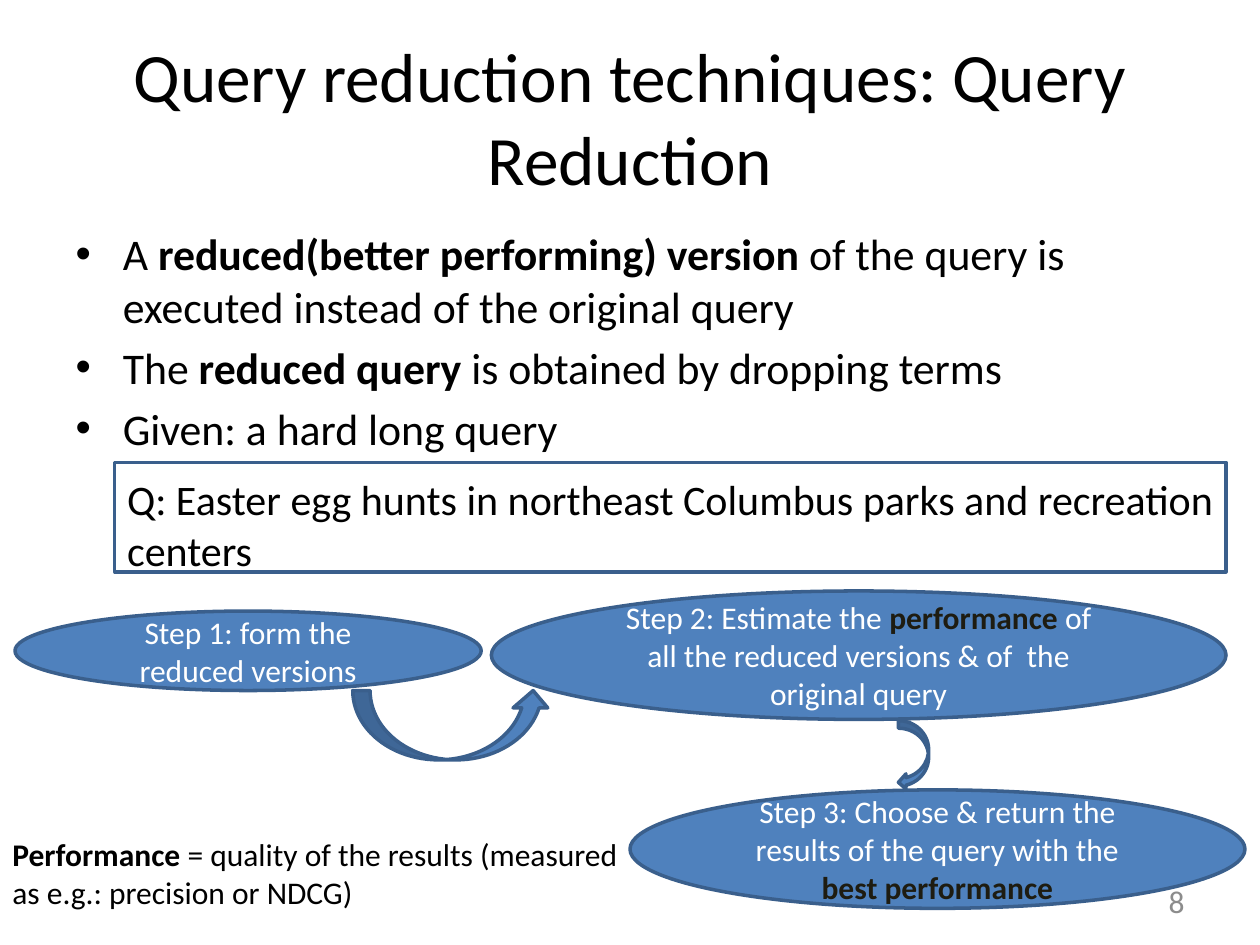
"""Build the slide on query reduction and its three steps."""
import pptx
import pptx.dml.color
import pptx.enum.shapes
import pptx.enum.text
import pptx.util

Pt = pptx.util.Pt
RGB = pptx.dml.color.RGBColor.from_string
Preset = pptx.enum.shapes.MSO_SHAPE
Align = pptx.enum.text.PP_ALIGN
Anchor = pptx.enum.text.MSO_ANCHOR

THEME = {
    "font": "Calibri",
    "fill": "4F81BD",
    "outline": "3A5F8C",
    "outline_width": 2,
    "emphasis": "1E1C11",
    "title": {"size": 39.6, "color": "000000"},
    "body": {"size": 25, "color": "000000"},
    "query": {"size": 24, "color": "000000"},
    "step": {"size": 18, "color": "FFFFFF"},
    "note": {"size": 18, "color": "000000"},
    "number": {"size": 18, "color": "8C8C8C"},
}


def write(holder, paragraphs, role, align, frame_format, strong_color=None):
    frame = holder.text_frame
    for key, value in frame_format.items():
        setattr(frame, key, value)
    for index, pieces in enumerate(paragraphs):
        line = frame.add_paragraph() if index else frame.paragraphs[0]
        line.alignment = align
        for text, strong in pieces:
            piece = line.add_run()
            piece.text = text
            color = strong_color if strong and strong_color else THEME[role]["color"]
            font_format = {"name": THEME["font"], "size": Pt(THEME[role]["size"]), "bold": strong}
            for key, value in font_format.items():
                setattr(piece.font, key, value)
            piece.font.color.rgb = RGB(color)


def draw(preset, box, filled=True):
    figure = slide.shapes.add_shape(preset, *map(Pt, box))
    figure.shadow.inherit = False
    if filled:
        figure.fill.solid()
        figure.fill.fore_color.rgb = RGB(THEME["fill"])
    else:
        figure.fill.background()
    figure.line.color.rgb = RGB(THEME["outline"])
    figure.line.width = Pt(THEME["outline_width"])
    return figure


deck = pptx.Presentation()
deck.slide_width, deck.slide_height = Pt(720), Pt(540)
slide = deck.slides.add_slide(deck.slide_layouts[1])

heading = slide.shapes.title
points = slide.placeholders[1]
for holder, box in ((heading, (36, 21.6, 648, 90)), (points, (36, 126, 648, 356.4))):
    for key, value in zip(("left", "top", "width", "height"), box):
        setattr(holder, key, Pt(value))

fixed = {"word_wrap": True, "auto_size": pptx.enum.text.MSO_AUTO_SIZE.NONE}
centred = {**fixed, "vertical_anchor": Anchor.MIDDLE}

write(heading, [[("Query reduction techniques: Query Reduction", False)]], "title", Align.CENTER, centred)
write(points, [
    [("A ", False), ("reduced(better performing) version ", True),
     ("of the query is executed instead of the original query", False)],
    [("The ", False), ("reduced query ", True), ("is obtained by dropping terms", False)],
    [("Given: a hard long query", False)],
], "body", Align.LEFT, fixed)

draw(Preset.RECTANGLE, (65.5, 264.2, 635, 62.6), filled=False)
query = slide.shapes.add_textbox(*map(Pt, (65.5, 267.1, 641.5, 65.5)))
write(query, [[("Q: Easter egg hunts in northeast Columbus parks and recreation centers", False)]],
      "query", Align.LEFT, fixed)

steps = [
    ((8.6, 349.2, 266.4, 45.4), [("Step 1: form the reduced versions", False)]),
    ((280.8, 337.7, 419.8, 73.4),
     [("Step 2: Estimate the ", False), ("performance", True),
      (" of all the reduced versions & of  the original query", False)]),
    ((360, 451.4, 351.4, 67.7),
     [("Step 3: Choose & return the results of the query with the ", False),
      ("best performance", True)]),
]
for box, pieces in steps:
    write(draw(Preset.OVAL, box), [pieces], "step", Align.CENTER, centred, THEME["emphasis"])

draw(Preset.CURVED_UP_ARROW, (201.6, 394.6, 113, 39.6))
draw(Preset.CURVED_LEFT_ARROW, (513.4, 411.8, 17.3, 39.6))

definition = slide.shapes.add_textbox(*map(Pt, (0, 473.8, 366.5, 51.1)))
write(definition, [
    [("Performance", True), (" = quality of the results (measured", False)],
    [("as e.g.: precision or NDCG)", False)],
], "note", Align.LEFT, {**fixed, "word_wrap": False})

page_number = slide.shapes.add_textbox(*map(Pt, (516.2, 500.4, 167.8, 28.8)))
write(page_number, [[("8", False)]], "number", Align.RIGHT, centred)

deck.save("out.pptx")
